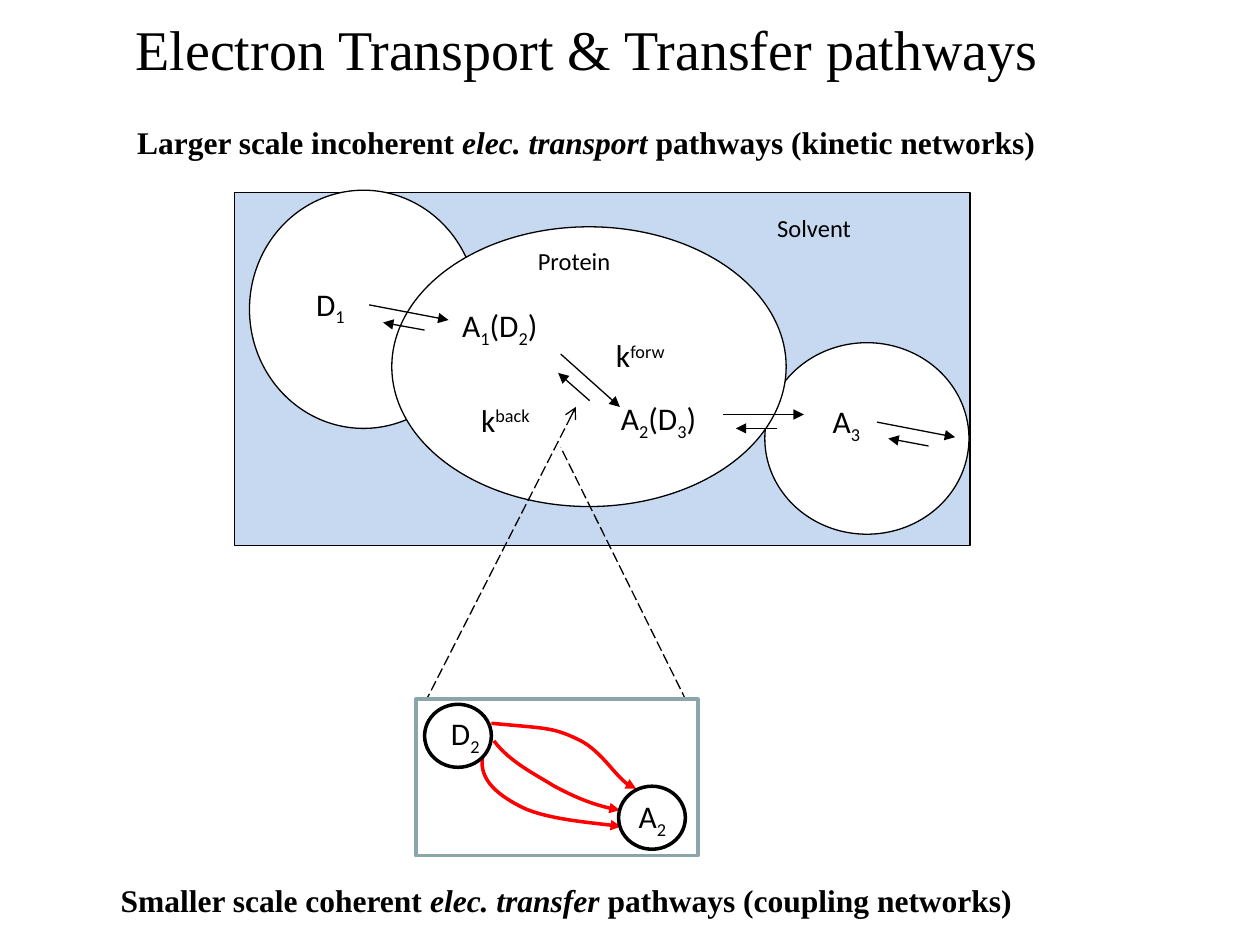
from dataclasses import dataclass

from lxml import etree
from pptx import Presentation
from pptx.dml.color import RGBColor
from pptx.enum.dml import MSO_LINE
from pptx.enum.shapes import MSO_CONNECTOR, MSO_SHAPE
from pptx.enum.text import MSO_ANCHOR, PP_ALIGN
from pptx.oxml.ns import qn
from pptx.util import Inches, Pt

RECT, OVAL = MSO_SHAPE.RECTANGLE, MSO_SHAPE.OVAL
STRAIGHT, DASH = MSO_CONNECTOR.STRAIGHT, MSO_LINE.LONG_DASH
MIDDLE, CENTER = MSO_ANCHOR.MIDDLE, PP_ALIGN.CENTER
COLUMNS, ROWS, CELL = 100, 75, Inches(0.1)
SUB, SUPER = -25000, 30000


@dataclass(frozen=True)
class Theme:
    """Colours, fonts, type sizes and line widths of the slide."""
    ink: str = "000000"
    paper: str = "FFFFFF"
    solvent: str = "C6D9F1"
    frame: str = "8AA6A8"
    pathway: str = "FF0000"
    serif: str = "Times New Roman"
    sans: str = "Calibri"
    title: int = 32
    body: int = 18
    region: int = 14
    thin: float = 0.75
    thick: float = 2


THEME = Theme()


def grid(*cells):
    """Turn grid columns or rows into lengths."""
    return [round(cell * CELL) for cell in cells]


def style_line(line, color, width, tip=None, dash=None):
    """Style a line and give it an optional arrowhead."""
    line.color.rgb = RGBColor.from_string(color)
    line.width = Pt(width)
    if dash:
        line.dash_style = dash
    if tip:
        etree.SubElement(line._get_or_add_ln(), qn("a:tailEnd"), type=tip)


def add_region(slide, kind, box, fill, color=THEME.ink, width=THEME.thin):
    """Add an outlined shape, unfilled when fill is None."""
    region = slide.shapes.add_shape(kind, *grid(*box))
    region.shadow.inherit = False
    if fill:
        region.fill.solid()
        region.fill.fore_color.rgb = RGBColor.from_string(fill)
    else:
        region.fill.background()
    style_line(region.line, color, width)


def add_text(slide, box, runs, size, font, fill=None):
    """Add a one-paragraph text box and return its frame and runs."""
    text_box = slide.shapes.add_textbox(*grid(*box))
    if fill:
        text_box.fill.solid()
        text_box.fill.fore_color.rgb = RGBColor.from_string(fill)
    frame = text_box.text_frame
    frame.word_wrap = True
    paragraph = frame.paragraphs[0]
    paragraph.font.size = Pt(size)
    paragraph.font.name = font
    paragraph.font.color.rgb = RGBColor.from_string(THEME.ink)
    for words in runs:
        paragraph.add_run().text = words
    return frame, paragraph.runs


def add_label(slide, box, runs, shift=SUB, size=THEME.body, fill=None):
    """Add a label whose every second run is a subscript or superscript."""
    _, pieces = add_text(slide, box, runs, size, THEME.sans, fill)
    for piece in pieces[1::2]:
        piece._r.get_or_add_rPr().set("baseline", str(shift))


def add_heading(slide, box, runs):
    """Add a bold heading whose middle run is italic."""
    frame, pieces = add_text(slide, box, runs, THEME.body, THEME.serif)
    frame.paragraphs[0].font.bold = True
    pieces[1].font.italic = True


def add_title(slide, box, words):
    """Add the centred slide title."""
    frame, _ = add_text(slide, box, [words], THEME.title, THEME.serif)
    frame.vertical_anchor = MIDDLE
    frame.paragraphs[0].alignment = CENTER


def add_arrow(slide, ends, tip="triangle", dash=None):
    """Add a straight thin line with an optional arrowhead."""
    arrow = slide.shapes.add_connector(STRAIGHT, *grid(*ends))
    etree.SubElement(arrow._element.spPr, qn("a:effectLst"))
    style_line(arrow.line, THEME.ink, THEME.thin, tip, dash)


def add_pathway(slide, start, *points):
    """Add a curved arrow; each three points make one Bézier segment."""
    builder = slide.shapes.build_freeform(*grid(*start))
    builder.add_line_segments([grid(*point) for point in points], close=False)
    curve = builder.convert_to_shape()
    curve.shadow.inherit = False
    curve.fill.background()
    style_line(curve.line, THEME.pathway, THEME.thick, "triangle")
    steps = list(curve._element.iter(qn("a:lnTo")))
    for first in range(0, len(steps), 3):
        bezier = etree.Element(qn("a:cubicBezTo"))
        steps[first].addprevious(bezier)
        for step in steps[first:first + 3]:
            bezier.append(step[0])
            step.getparent().remove(step)


def draw_network(slide):
    """Draw the kinetic network of donors and acceptors."""
    add_region(slide, RECT, (18.6, 15.3, 58.4, 28), THEME.solvent)
    for box in ((19.8, 15.1, 18.1, 18.9), (60.7, 27.2, 16.2, 15.2),
                (31.1, 18, 31.3, 22.2)):
        add_region(slide, OVAL, box, THEME.paper)
    add_label(slide, (24.1, 22.1, 6.5, 5), ["D", "1"])
    add_label(slide, (35.7, 23.8, 10.9, 4.6), ["A", "1", "(D", "2", ")"],
              fill=THEME.paper)
    add_label(slide, (48.3, 31.2, 9.8, 4.6), ["A", "2", "(D", "3", ")"])
    add_label(slide, (65.1, 31.4, 6.7, 4.6), ["A", "3"])
    add_label(slide, (47.9, 26.2, 7.1, 4.5), ["k", "forw"], SUPER)
    add_label(slide, (37.2, 31.3, 8.7, 4.5), ["k", "back"], SUPER)
    add_label(slide, (41.7, 19, 13.4, 4.5), ["Protein"], size=THEME.region)
    add_label(slide, (60.7, 16.4, 13.4, 4.5), ["Solvent"], size=THEME.region)
    for forward, back in (
            ((29.3, 24.2, 35.6, 25.4), (33.7, 26.2, 30.4, 25.6)),
            ((44.5, 28.1, 49.2, 32.3), (46.8, 31.8, 44.3, 29.6)),
            ((57.4, 32.9, 63.8, 32.9), (61.7, 34, 58.4, 34)),
            ((69.6, 33.5, 75.8, 34.7), (73.7, 35.4, 70.5, 34.8))):
        add_arrow(slide, forward)
        add_arrow(slide, back)


def draw_coupling(slide):
    """Draw the zoomed-in coupling pathways from D2 to A2."""
    add_arrow(slide, (33.2, 56.8, 45.7, 32.3), "arrow", DASH)
    add_arrow(slide, (55, 56.7, 44.5, 35.5), None, DASH)
    add_region(slide, RECT, (33, 55.5, 22.4, 12.4), THEME.paper,
               THEME.frame, THEME.thick)
    add_label(slide, (34.8, 56.2, 5.2, 4), ["D", "2"], fill=THEME.paper)
    add_label(slide, (49.7, 62.8, 5.2, 4), ["A", "2"], fill=THEME.paper)
    add_pathway(slide, (38.3, 60.1), (38, 62), (39.7, 63.2), (41.5, 64.1),
                (43.4, 65), (48, 65.4), (49.3, 65.6))
    add_pathway(slide, (39.2, 58.8), (40.5, 60.5), (42.4, 61.4), (44, 62.4),
                (45.7, 63.3), (47.4, 64), (49.2, 64.3))
    add_pathway(slide, (39, 57.4), (43.1, 57.8), (43.8, 57.7), (45.7, 58.6),
                (47.6, 59.4), (49.2, 62.3), (50.5, 62.6))
    for left, top in ((33.7, 55.9), (49.1, 62.4)):
        add_region(slide, OVAL, (left, top, 5.3, 5), None, width=THEME.thick)


def main():
    """Build and save the slide."""
    deck = Presentation()
    deck.slide_width, deck.slide_height = grid(COLUMNS, ROWS)
    slide = deck.slides.add_slide(deck.slide_layouts[6])
    draw_network(slide)
    add_heading(slide, (9.9, 9.3, 85.4, 4),
                ["Larger scale incoherent ", "elec. transport ",
                 "pathways (kinetic networks)"])
    draw_coupling(slide)
    add_heading(slide, (8.6, 69.4, 79.4, 4),
                ["Smaller scale coherent ", "elec. transfer ",
                 "pathways (coupling networks)"])
    add_title(slide, (3.7, 0, 85.8, 7.6), "Electron Transport & Transfer pathways")
    deck.save("out.pptx")


if __name__ == "__main__":
    main()
